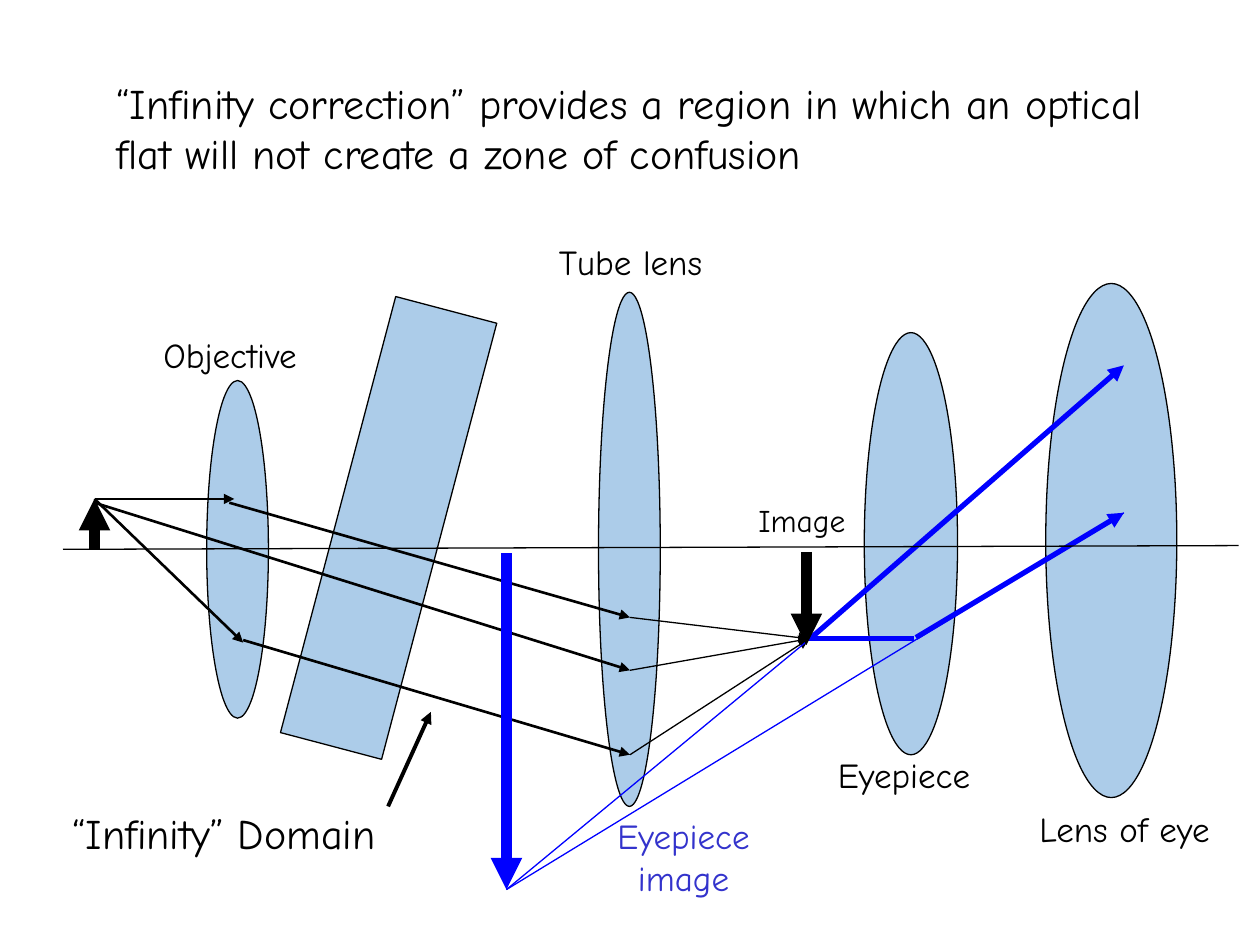
from dataclasses import dataclass

from pptx import Presentation
from pptx.dml.color import RGBColor
from pptx.enum.shapes import MSO_CONNECTOR as Connector, MSO_SHAPE as Shape
from pptx.enum.text import MSO_ANCHOR as Anchor, PP_ALIGN as Align
from pptx.oxml.ns import qn
from pptx.oxml.xmlchemy import OxmlElement
from pptx.util import Inches, Pt


@dataclass(frozen=True)
class Theme:
    font: str = "Comic Neue"
    ink: str = "000000"
    glass: str = "5B9BD5"
    beam: str = "0000FF"
    accent: str = "3333CC"
    glass_alpha: int = 50
    title_size: int = 24
    label_size: int = 20
    small_size: int = 18
    thin: float = 0.75
    ray: float = 1.5
    pointer: float = 2.25
    bold: float = 3
    heavy: float = 6


@dataclass(frozen=True)
class Box:
    left: float
    top: float
    width: float
    height: float

    def inner(self, left, top, width, height):
        return Box(self.left + left, self.top + top, width, height)

    def point(self, spot):
        return Inches(self.left + spot[0]), Inches(self.top + spot[1])

    def frame(self):
        return [Inches(v) for v in (self.left, self.top, self.width, self.height)]


THEME = Theme()


def color(value):
    return RGBColor.from_string(value)


def add_text(page, box, text, size=THEME.label_size, ink=THEME.ink,
             align=Align.CENTER, anchor=Anchor.MIDDLE, wrap=False):
    frame = page.shapes.add_textbox(*box.frame()).text_frame
    frame.word_wrap = wrap
    frame.vertical_anchor = anchor
    for index, line in enumerate(text.split("\n")):
        para = frame.paragraphs[0] if index == 0 else frame.add_paragraph()
        para.alignment = align
        span = para.add_run()
        span.text = line
        span.font.name = THEME.font
        span.font.size = Pt(size)
        span.font.color.rgb = color(ink)


def add_glass(page, box, kind=Shape.OVAL, rotation=0):
    glass = page.shapes.add_shape(kind, *box.frame())
    glass.shadow.inherit = False
    glass.rotation = rotation
    glass.fill.solid()
    glass.fill.fore_color.rgb = color(THEME.glass)
    glass.line.color.rgb = color(THEME.ink)
    glass.line.width = Pt(THEME.thin)
    alpha = OxmlElement("a:alpha")
    alpha.set("val", str(THEME.glass_alpha * 1000))
    solid = glass.element.spPr.find(qn("a:solidFill"))
    solid.find(qn("a:srgbClr")).append(alpha)


def add_ray(page, box, start, end, width=THEME.ray, ink=THEME.ink, arrow=True):
    ray = page.shapes.add_connector(
        Connector.STRAIGHT, *box.point(start), *box.point(end))
    ray.line.color.rgb = color(ink)
    ray.line.width = Pt(width)
    if arrow:
        tail = OxmlElement("a:tailEnd")
        tail.set("type", "triangle")
        ray.line._get_or_add_ln().append(tail)
    ray.element.spPr.append(OxmlElement("a:effectLst"))


def add_title(page, box):
    add_text(page, box, "“Infinity correction” provides a region in which "
             "an optical flat will not create a zone of confusion",
             size=THEME.title_size, align=Align.LEFT, wrap=True)


def add_optics(page, box):
    add_glass(page, box.inner(2.17, 0.65, 0.83, 3.58), Shape.RECTANGLE, 14.8)
    objective = (1.14, 1.27, 0.49, 2.68)
    tube_lens = (4.25, 0.57, 0.49, 4.08)
    eyepiece = (6.36, 0.89, 0.74, 3.35)
    eye = (7.8, 0.5, 1.04, 4.08)
    for lens in (objective, tube_lens, eyepiece, eye):
        add_glass(page, box.inner(*lens))


def add_object_rays(page, box):
    tip, focus = (0.25, 2.21), (5.92, 3.32)
    upper, middle, lower = [(4.5, y) for y in (3.15, 3.57, 4.24)]
    add_ray(page, box, (0.25, 2.61), tip, THEME.heavy)
    for start, end in ((tip, (1.36, 2.21)), (tip, (1.43, 3.35)),
                       ((1.32, 2.24), upper), ((0.25, 2.24), middle),
                       ((1.43, 3.33), lower)):
        add_ray(page, box, start, end)
    for start in (upper, middle, lower):
        add_ray(page, box, start, focus, THEME.thin)


def add_eyepiece_rays(page, box):
    focus, virtual_tip = (5.94, 3.31), (3.52, 5.31)
    upper, lower = (8.42, 1.15), (8.42, 2.32)
    add_ray(page, box, (3.52, 2.64), virtual_tip, THEME.heavy, THEME.beam)
    for start, end in ((focus, upper), ((6.77, 3.31), lower)):
        add_ray(page, box, start, end, THEME.bold, THEME.beam)
    for start in (focus, lower):
        add_ray(page, box, start, virtual_tip, THEME.thin, THEME.beam, False)
    add_ray(page, box, (5.92, 3.32), (6.75, 3.32),
            THEME.bold, THEME.beam, False)
    add_ray(page, box, (5.9, 2.63), (5.9, 3.37), THEME.heavy)


def add_labels(page, box):
    for text, place in (("Tube lens", (3.78, 0.08, 1.45, 0.49)),
                        ("Objective", (0.58, 0.82, 1.49, 0.49)),
                        ("Eyepiece", (6, 4.15, 1.35, 0.49)),
                        ("Lens of eye", (7.58, 4.58, 1.69, 0.49))):
        add_text(page, box.inner(*place), text)
    add_text(page, box.inner(4.25, 4.61, 1.35, 0.88), "Eyepiece\nimage",
             ink=THEME.accent)
    add_text(page, box.inner(5.42, 2.18, 0.93, 0.45), "Image",
             size=THEME.small_size, align=Align.LEFT, anchor=Anchor.TOP)
    add_text(page, box.inner(-0.17, 4.57, 2.9, 0.57), "“Infinity” Domain",
             size=THEME.title_size)
    add_ray(page, box, (2.58, 4.65), (2.92, 3.9), THEME.pointer)


def add_diagram(page, box):
    add_optics(page, box)
    add_object_rays(page, box)
    add_eyepiece_rays(page, box)
    add_labels(page, box)
    add_ray(page, box, (0, 2.61), (box.width, 2.58), THEME.thin, arrow=False)


def main():
    deck = Presentation()
    deck.slide_width, deck.slide_height = Inches(10), Inches(7.5)
    page = deck.slides.add_slide(deck.slide_layouts[6])
    add_title(page, Box(0.83, 0.5, 8.52, 1.03))
    add_diagram(page, Box(0.5, 1.75, 9.33, 5.49))
    deck.save("out.pptx")


if __name__ == "__main__":
    main()
